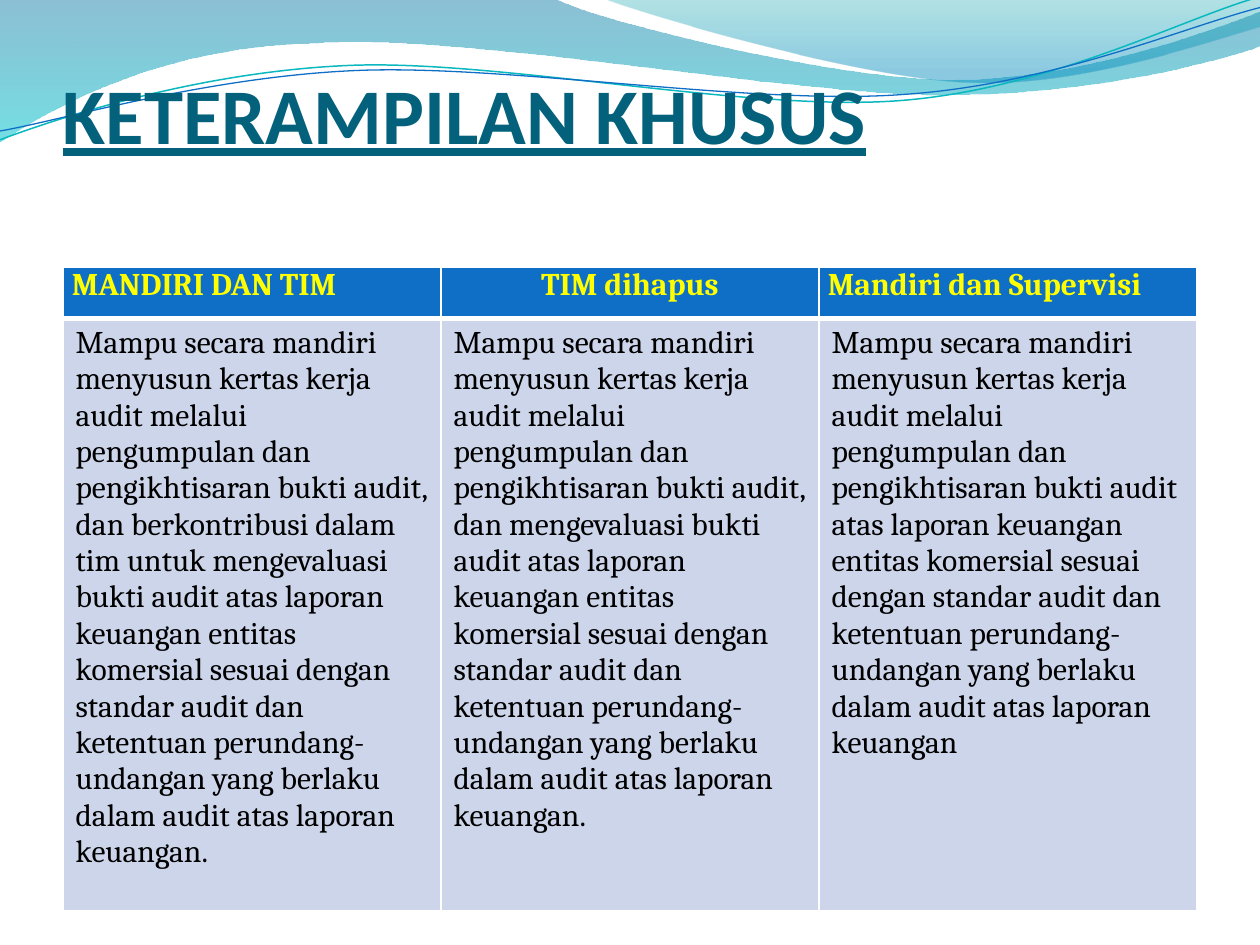
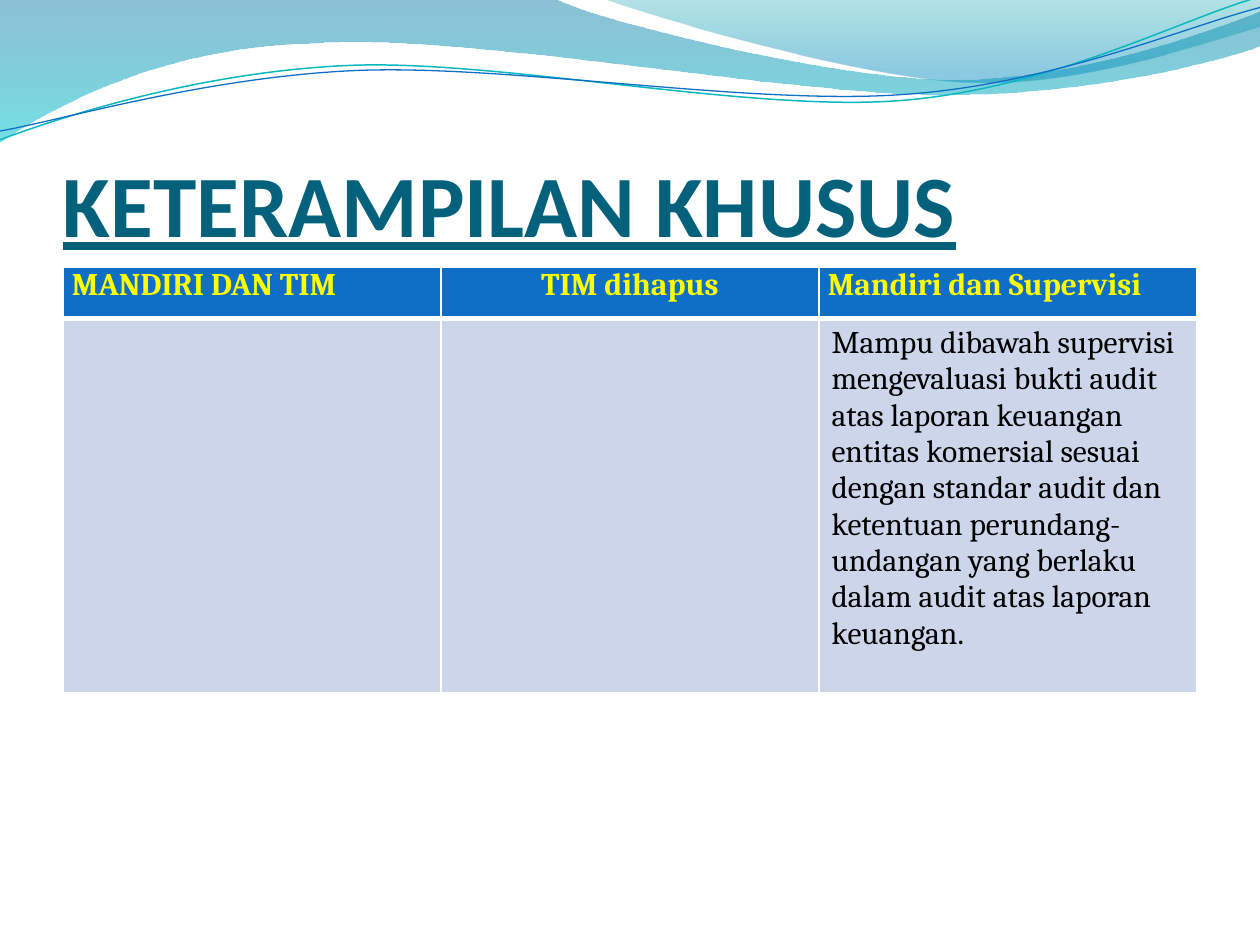
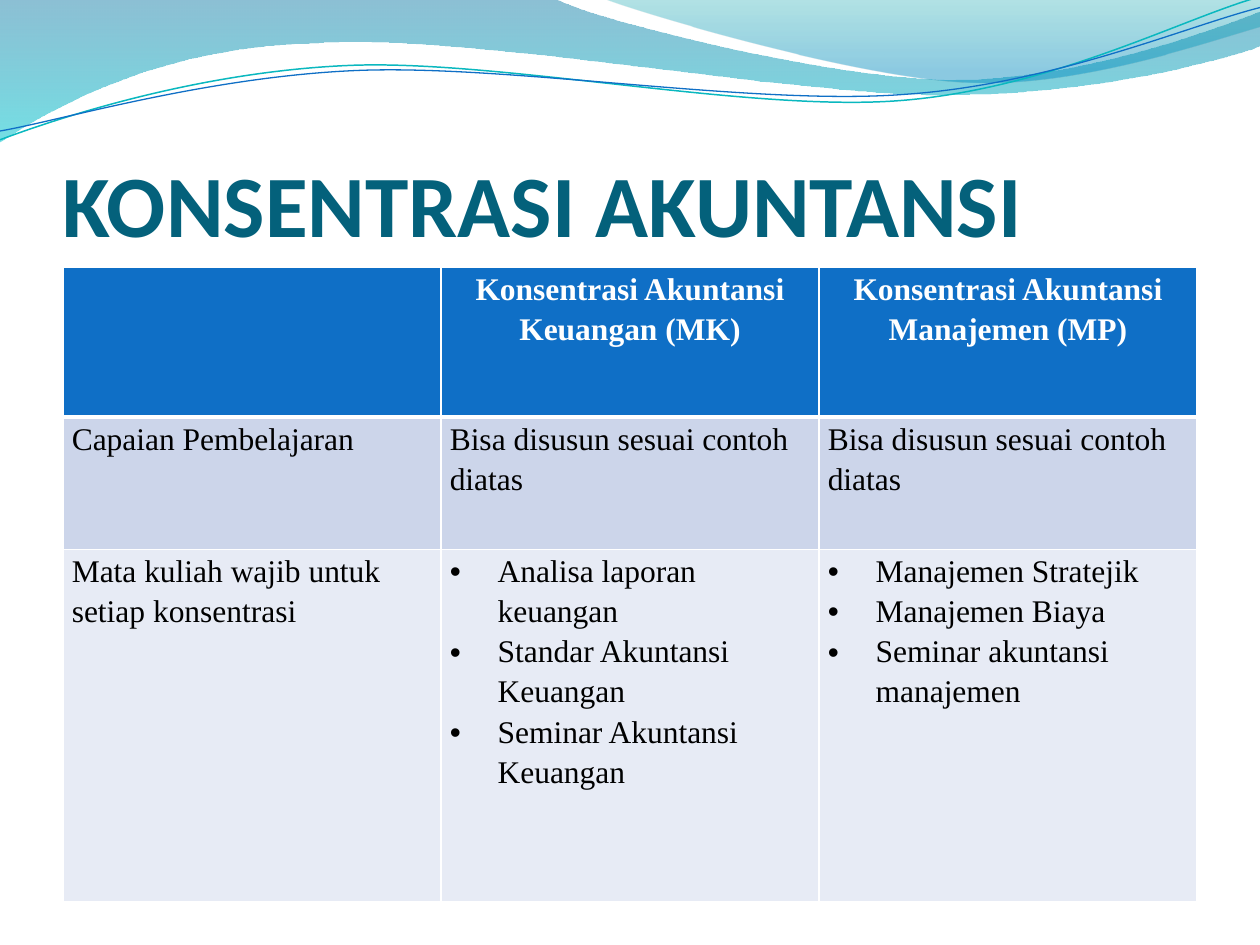
import lxml.etree
import pptx
import pptx.dml.color
import pptx.enum.text
import pptx.oxml.ns
import pptx.util

Inches = pptx.util.Inches
Pt = pptx.util.Pt
ALIGN = pptx.enum.text.PP_ALIGN
ANCHOR = pptx.enum.text.MSO_ANCHOR
qn = pptx.oxml.ns.qn

WHITE, BLACK, YELLOW = "FFFFFF", "000000", "FFFF00"
TITLE, BLUE, TEAL = "04617B", "0F6FC6", "0AB8BF"
PALE, PALER = "CCD5EA", "E7EBF5"

BANDS = [
    ([(0, 0), (4.4, -0.01),
      (4.76, 0.17, 6.64, 0.63, 7.58, 0.63), (8.53, 0.63, 9.58, 0.26, 10, 0.09),
      (10.01, 0.36),
      (9.83, 0.44, 8.7, 0.76, 7.46, 0.75), (6.22, 0.75, 3.82, 0.28, 2.57, 0.34),
      (1.29, 0.36, 0.46, 0.83, -0.01, 1.13), (0, 0)],
     [(0, "0074A1", 45), (1, "00C6CF", 55)]),
    ([(4.79, -0.01), (5.09, 0.11, 6.82, 0.62, 7.69, 0.65),
      (8.56, 0.69, 9.61, 0.32, 10, 0.21), (10, 0), (4.79, -0.01)],
     [(0, "00A1A9", 30), (0.8, "008BBF", 45)]),
]
WAVES = [
    ([(0, 1.11), (0.48, 0.93, 1.58, 0.57, 2.77, 0.52),
      (3.95, 0.47, 5.93, 0.89, 7.13, 0.8), (8.33, 0.71, 9.38, 0.15, 9.98, -0.02)],
     TEAL, 0.85),
    ([(0, 1.04), (0.47, 0.96, 1.64, 0.61, 2.83, 0.56),
      (4.03, 0.51, 5.97, 0.84, 7.17, 0.75), (8.36, 0.67, 9.41, 0.21, 10, 0.06)],
     BLUE, 0.75),
]

SKILL_HEADER = ["MANDIRI DAN TIM", "TIM dihapus", "Mandiri dan Supervisi"]
COLLECT = ("Mampu secara mandiri menyusun kertas kerja audit melalui "
           "pengumpulan dan pengikhtisaran bukti audit")
RULES = ("atas laporan keuangan entitas komersial sesuai dengan standar audit dan "
         "ketentuan perundang-undangan yang berlaku dalam audit atas laporan keuangan")

SKILL_STYLE = dict(font="Cambria", header_color=YELLOW, spacing=None,
                   header_align=[ALIGN.LEFT, ALIGN.CENTER, ALIGN.LEFT],
                   body_margins=(0.1, 0.05))
COURSE_STYLE = dict(font="Times New Roman", header_color=WHITE, spacing=1.15,
                    header_align=[ALIGN.CENTER] * 3, body_margins=(0.07, 0))

SLIDES = [
    dict(title="KETERAMPILAN KHUSUS", size=45, underline=True, title_gap=0.75,
         heights=[0.41, 4.7], style=SKILL_STYLE,
         rows=[SKILL_HEADER,
               [f"{COLLECT}, dan berkontribusi dalam tim untuk mengevaluasi bukti audit {RULES}.",
                f"{COLLECT}, dan mengevaluasi bukti audit {RULES}.",
                f"{COLLECT} {RULES}"]]),
    dict(title="KETERAMPILAN KHUSUS", size=50, underline=True, title_gap=0,
         heights=[0.41, 2.97], style=SKILL_STYLE,
         rows=[SKILL_HEADER,
               ["", "", f"Mampu dibawah supervisi mengevaluasi bukti audit {RULES}."]]),
    dict(title="KONSENTRASI AKUNTANSI", size=50, underline=False, title_gap=0,
         heights=[1.19, 1.05, 2.8], style=COURSE_STYLE,
         rows=[["", "Konsentrasi Akuntansi Keuangan (MK)",
                "Konsentrasi Akuntansi Manajemen (MP)"],
               ["Capaian Pembelajaran", "Bisa disusun sesuai contoh diatas",
                "Bisa disusun sesuai contoh diatas"],
               ["Mata kuliah wajib untuk setiap konsentrasi",
                ["Analisa laporan keuangan", "Standar Akuntansi Keuangan",
                 "Seminar Akuntansi Keuangan"],
                ["Manajemen Stratejik", "Manajemen Biaya",
                 "Seminar akuntansi manajemen"]]]),
]


def rgb(value):
    return pptx.dml.color.RGBColor.from_string(value)


def write(tf, text, font="Calibri", size=18, color=BLACK, bold=False,
          underline=False, align=ALIGN.LEFT, spacing=None):
    bulleted = isinstance(text, list)
    for i, line in enumerate(text if bulleted else [text]):
        p = tf.add_paragraph() if i else tf.paragraphs[0]
        p.alignment = align
        if spacing:
            p.line_spacing = spacing
        if bulleted:
            pPr = p._p.get_or_add_pPr()
            pPr.set("marL", str(Inches(0.38)))
            pPr.set("indent", str(-Inches(0.38)))
            lxml.etree.SubElement(pPr, qn("a:buFont"), typeface="Arial")
            lxml.etree.SubElement(pPr, qn("a:buChar"), char="•")
        if line:
            r = p.add_run()
            r.text = line
            r.font.name = font
            r.font.size = Pt(size)
            r.font.bold = bold
            r.font.underline = underline
            r.font.color.rgb = rgb(color)


def add_outline(s, path, close):
    points = [(Inches(x), Inches(y)) for part in path
              for x, y in zip(part[::2], part[1::2])]
    builder = s.shapes.build_freeform(*points[0])
    builder.add_line_segments(points[1:], close=close)
    sp = builder.convert_to_shape()
    sp.shadow.inherit = False
    lines = iter(list(sp._element.iter(qn("a:lnTo"))))
    for part in path[1:]:
        first = next(lines)
        if len(part) == 6:
            curve = lxml.etree.Element(qn("a:cubicBezTo"))
            first.addprevious(curve)
            for line in (first, next(lines), next(lines)):
                curve.append(line[0])
                line.getparent().remove(line)
    return sp


def add_waves(s):
    for path, stops in BANDS:
        sp = add_outline(s, path, True)
        sp.line.fill.background()
        sp.fill.gradient()
        sp.fill.gradient_angle = 270
        for stop, (position, color, opacity) in zip(sp.fill.gradient_stops, stops):
            stop.position = position
            stop.color.rgb = rgb(color)
            lxml.etree.SubElement(stop._gs[0], qn("a:alpha"), val=str(opacity * 1000))
    for path, color, width in WAVES:
        sp = add_outline(s, path, False)
        sp.fill.background()
        sp.line.color.rgb = rgb(color)
        sp.line.width = Pt(width)


def add_title(s, content):
    sp = s.shapes.add_textbox(Inches(0.5), Inches(0.77), Inches(9), Inches(1.25))
    tf = sp.text_frame
    tf.word_wrap = True
    tf.vertical_anchor = ANCHOR.BOTTOM
    tf.margin_left = tf.margin_right = 0
    tf.margin_top = Inches(0.05)
    tf.margin_bottom = Inches(content["title_gap"])
    write(tf, content["title"], size=content["size"], color=TITLE, bold=True,
          underline=content["underline"])


def add_borders(cell, top, bottom):
    tcPr = cell._tc.get_or_add_tcPr()
    for side, width in (("L", 1), ("R", 1), ("T", top), ("B", bottom)):
        ln = lxml.etree.SubElement(tcPr, qn(f"a:ln{side}"), w=str(Pt(width)))
        fill = lxml.etree.SubElement(ln, qn("a:solidFill"))
        lxml.etree.SubElement(fill, qn("a:srgbClr"), val=WHITE)


def add_grid(s, rows, heights, style):
    table = s.shapes.add_table(len(rows), 3, Inches(0.5), Inches(2.12),
                               Inches(9), Inches(sum(heights))).table
    fills = [BLUE, PALE, PALER]
    for i, row in enumerate(rows):
        table.rows[i].height = Inches(heights[i])
        header = i == 0
        side, edge = (0.07, 0) if header else style["body_margins"]
        for j, text in enumerate(row):
            cell = table.cell(i, j)
            add_borders(cell, 3 if i == 1 else 1, 3 if header else 1)
            cell.fill.solid()
            cell.fill.fore_color.rgb = rgb(fills[i])
            cell.margin_left = cell.margin_right = Inches(side)
            cell.margin_top = cell.margin_bottom = Inches(edge)
            write(cell.text_frame, text, font=style["font"], bold=header,
                  color=style["header_color"] if header else BLACK,
                  align=style["header_align"][j] if header else ALIGN.LEFT,
                  spacing=style["spacing"])


def main():
    prs = pptx.Presentation()
    prs.slide_width, prs.slide_height = Inches(10), Inches(7.5)
    for content in SLIDES:
        s = prs.slides.add_slide(prs.slide_layouts[6])
        add_waves(s)
        add_title(s, content)
        add_grid(s, content["rows"], content["heights"], content["style"])
    prs.save("out.pptx")


if __name__ == "__main__":
    main()
